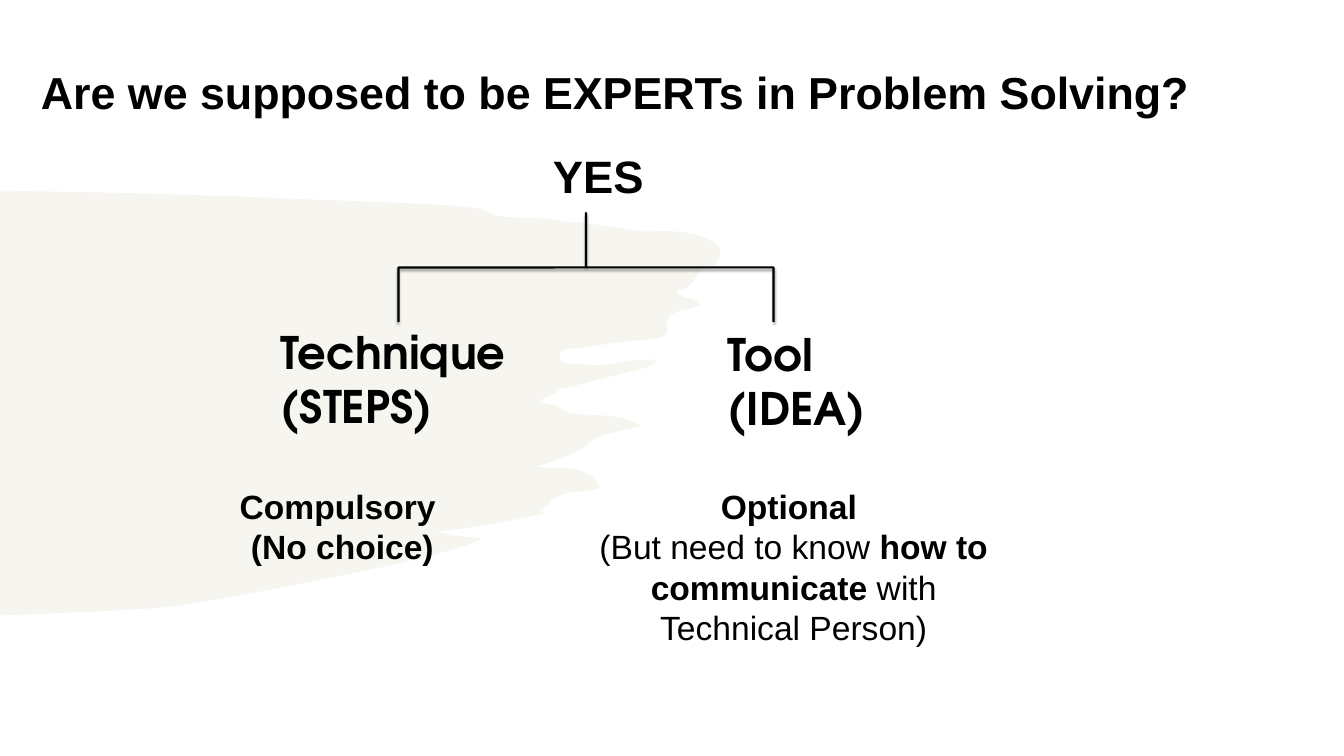
from lxml.etree import SubElement
from pptx import Presentation
from pptx.dml.color import RGBColor
from pptx.enum.shapes import MSO_SHAPE
from pptx.enum.text import PP_ALIGN
from pptx.oxml.ns import qn
from pptx.util import Inches, Pt

BLACK = RGBColor(0x00, 0x00, 0x00)
BEIGE = RGBColor(0xEE, 0xEC, 0xE1)
BRUSH_TOP = 2.84
BRUSH_WIDTH = Inches(10.73)


def add_text(left, top, width, height, paragraphs, size, font="Arial",
             align=PP_ALIGN.LEFT, wrap=True):
    """Add a text box; each paragraph is a list of (text, bold) spans."""
    box = page.shapes.add_textbox(
        Inches(left), Inches(top), Inches(width), Inches(height))
    frame = box.text_frame
    frame.word_wrap = wrap
    for index, spans in enumerate(paragraphs):
        paragraph = frame.paragraphs[0] if index == 0 else frame.add_paragraph()
        paragraph.alignment = align
        for text, bold in spans:
            span = paragraph.add_run()
            span.text = text
            span.font.name = font
            span.font.size = Pt(size)
            span.font.bold = bold
            span.font.color.rgb = BLACK


deck = Presentation()
deck.slide_width = Inches(20)
deck.slide_height = Inches(11.25)
page = deck.slides.add_slide(deck.slide_layouts[6])

# Brush stroke: each row holds two handles and the end of a curve
brush_curves = [
    ((1.53, 9.1), (2.46, 9.05), (2.76, 9)),
    ((7.06, 8.25), (7.16, 8.01), (7.16, 8.01)),
    ((7.16, 8.01), (6.7, 7.97), (6.47, 7.91)),
    ((6.79, 7.9), (8.06, 7.67), (8.11, 7.63)),
    ((8.08, 7.62), (8.05, 7.61), (8.01, 7.6)),
    ((8.08, 7.57), (8.14, 7.53), (8.19, 7.47)),
    ((8.36, 7.28), (8.67, 7.34), (8.92, 7.26)),
    ((8.75, 6.85), (8.33, 7.02), (8, 6.94)),
    ((8.86, 6.68), (8.68, 6.56), (9.02, 6.46)),
    ((9.45, 6.35), (9.55, 6.34), (9.55, 6.34)),
    ((9.22, 6.13), (8.85, 6.21), (8.46, 6.14)),
    ((8.33, 6.05), (8.19, 6.01), (8.05, 5.99)),
    ((7.97, 5.94), (8.35, 5.87), (8.27, 5.79)),
    ((8.67, 5.73), (9.06, 5.6), (9.54, 5.49)),
    ((9.79, 5.43), (9.77, 5.35), (9.75, 5.35)),
    ((9.17, 5.35), (9.2, 5.47), (8.62, 5.42)),
    ((8.52, 5.41), (8.35, 5.46), (8.33, 5.33)),
    ((8.3, 5.16), (8.52, 5.2), (8.61, 5.18)),
    ((8.99, 5.12), (9.24, 5.09), (9.62, 5.05)),
    ((9.79, 5.03), (9.98, 5.06), (9.92, 4.81)),
    ((9.96, 4.57), (10.26, 4.64), (10.41, 4.53)),
    ((10.33, 4.39), (10.12, 4.49), (10.06, 4.3)),
    ((10.36, 4.36), (10.31, 3.96), (10.61, 3.96)),
    ((10.85, 3.72), (10.67, 3.61), (10.44, 3.52)),
    ((10.14, 3.41), (9.81, 3.45), (9.49, 3.43)),
    ((9.08, 3.4), (8.81, 3.3), (8.39, 3.3)),
    ((8.12, 3.23), (7.84, 3.25), (7.55, 3.23)),
    ((7.12, 3.18), (7.39, 3.13), (6.96, 3.08)),
    ((6.53, 3.03), (4.39, 2.96), (4.39, 2.96)),
    ((4.39, 2.96), (2.21, 2.86), (0, 2.84)),
]
corners = [(0, 9.16), (0.46, 9.14)] + [curve[-1] for curve in brush_curves]
builder = page.shapes.build_freeform(0, Inches(BRUSH_TOP))
builder.add_line_segments([(Inches(x), Inches(y)) for x, y in corners], close=True)
brush = builder.convert_to_shape()

# Turn the straight segments after the first two into Bezier curves
outline = next(brush._element.iter(qn("a:path")))
straight_lines = outline.findall(qn("a:lnTo"))[2:]
for line, curve in zip(straight_lines, brush_curves):
    line.clear()
    bezier = outline.makeelement(qn("a:cubicBezTo"))
    outline.replace(line, bezier)
    for x, y in curve:
        SubElement(bezier, qn("a:pt"), x=str(Inches(x)),
                   y=str(Inches(y) - Inches(BRUSH_TOP)))
outline.set("w", str(BRUSH_WIDTH))
brush.width = BRUSH_WIDTH
brush.shadow.inherit = False
brush.line.fill.background()
brush.fill.solid()
brush.fill.fore_color.rgb = BEIGE
brush_color = brush._element.spPr.find(qn("a:solidFill"))[0]
SubElement(brush_color, qn("a:alpha"), val="50000")

# Question and answer
add_text(8.13, 2.15, 3.73, 0.88, [[("YES", True)]], 48.6)
add_text(0.51, 0.92, 17.68, 0.91,
         [[("Are we supposed to be EXPERTs in Problem Solving?", True)]],
         48, wrap=False)

# Bracket from the answer to its two branches
bracket = page.shapes.add_shape(
    MSO_SHAPE.LEFT_BRACE, Inches(7.91), Inches(1.19), Inches(1.62), Inches(5.58))
bracket.rotation = 90
bracket.adjustments[0] = 0
bracket.adjustments[1] = 0.5
bracket.fill.background()
bracket.line.color.rgb = BLACK
bracket.line.width = Pt(2.25)
bracket.shadow.inherit = False
effects = bracket._element.spPr.find(qn("a:effectLst"))
shadow = SubElement(effects, qn("a:outerShdw"), blurRad=str(Pt(3)),
                    dist=str(Pt(2)), dir="5400000", rotWithShape="0")
shadow_color = SubElement(shadow, qn("a:srgbClr"), val=str(BLACK))
SubElement(shadow_color, qn("a:alpha"), val="45000")

# Branches and their notes
for left, top, width, name, kind in [
    (4.08, 4.79, 5.71, "Technique", "(STEPS)"),
    (10.73, 4.81, 6.6, "Tool", "(IDEA)"),
]:
    add_text(left, top, width, 2.02, [[(name, True)], [(kind, True)]],
             48, font="TeX Gyre Adventor")
add_text(3.45, 7.18, 3.29, 1.62,
         [[("Compulsory ", True)], [("(No choice)", True)]],
         36, align=PP_ALIGN.CENTER, wrap=False)
add_text(8.6, 7.18, 6.42, 2.83,
         [[("Optional ", True)],
          [("(But need to know ", False), ("how to communicate ", True),
           ("with Technical Person)", False)]],
         36, align=PP_ALIGN.CENTER)

deck.save("out.pptx")
